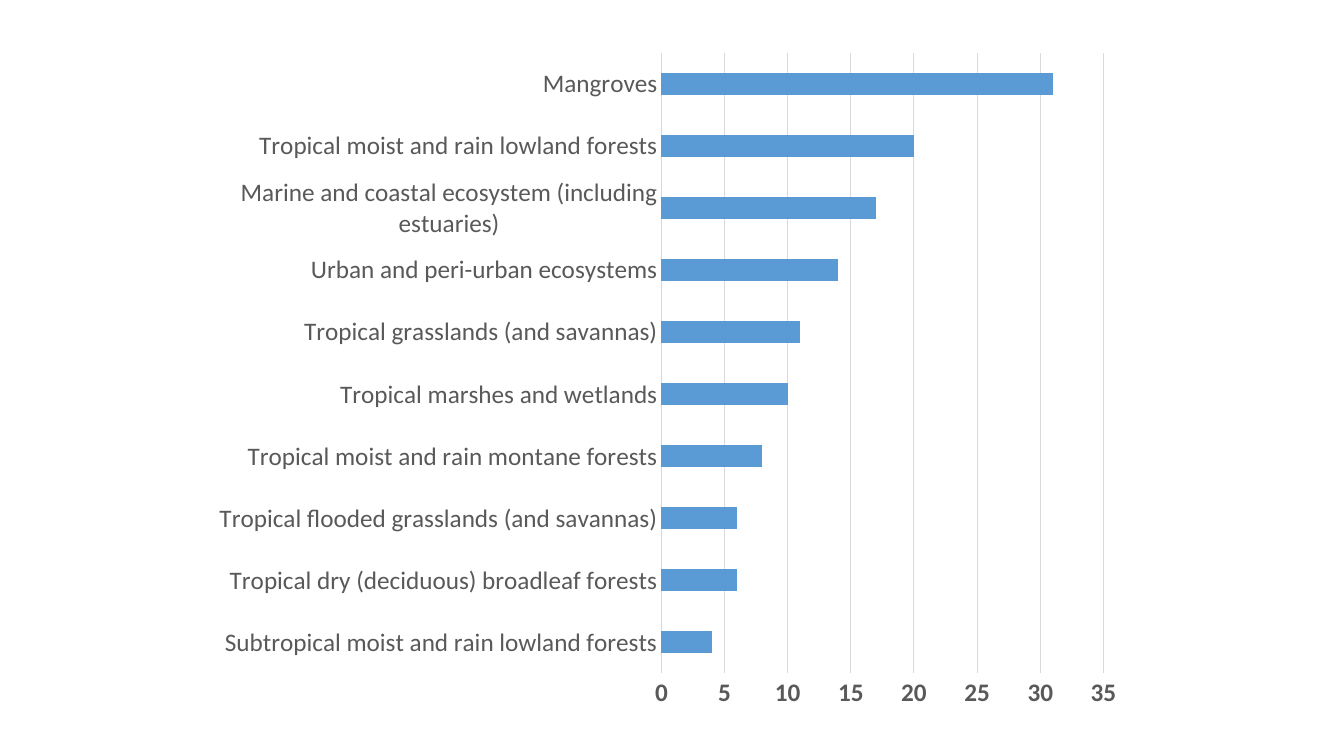
"""Build a slide with a bar chart of ecosystems."""
from dataclasses import dataclass

from pptx import Presentation
from pptx.chart.axis import _BaseAxis
from pptx.chart.chart import Chart
from pptx.chart.data import CategoryChartData
from pptx.dml.color import RGBColor
from pptx.dml.line import LineFormat
from pptx.enum.chart import XL_CHART_TYPE, XL_TICK_MARK
from pptx.oxml import parse_xml
from pptx.oxml.ns import nsdecls
from pptx.util import Inches, Pt

BAR = XL_CHART_TYPE.BAR_CLUSTERED
NO_TICK = XL_TICK_MARK.NONE
WIDTH, HEIGHT = Inches(13.33), Inches(7.5)
FONT, TEXT, RULE, BLUE = "Calibri", "595959", "D9D9D9", "5B9BD5"
CHART_BOX = (0.1493, 0.052, 0.6954, 0.9027)
PLOT_BOX = {"x": 0.493, "y": 0.02, "w": 0.473, "h": 0.909}


@dataclass(frozen=True)
class Ecosystem:
    name: str
    count: int


ECOSYSTEMS = [
    Ecosystem("Subtropical moist and rain lowland forests", 4),
    Ecosystem("Tropical dry (deciduous) broadleaf forests", 6),
    Ecosystem("Tropical flooded grasslands (and savannas)", 6),
    Ecosystem("Tropical moist and rain montane forests", 8),
    Ecosystem("Tropical marshes and wetlands", 10),
    Ecosystem("Tropical grasslands (and savannas)", 11),
    Ecosystem("Urban and peri-urban ecosystems", 14),
    Ecosystem("Marine and coastal ecosystem (including estuaries)", 17),
    Ecosystem("Tropical moist and rain lowland forests", 20),
    Ecosystem("Mangroves", 31),
]


def color(value: str) -> RGBColor:
    return RGBColor.from_string(value)


def style_line(line: LineFormat) -> None:
    line.color.rgb = color(RULE)
    line.width = Pt(0.75)


def style_axis(axis: _BaseAxis, bold: bool) -> None:
    formats = {"major_tick_mark": NO_TICK, "minor_tick_mark": NO_TICK}
    for key, value in formats.items():
        setattr(axis, key, value)
    font = axis.tick_labels.font
    for key, value in {"name": FONT, "size": Pt(18), "bold": bold}.items():
        setattr(font, key, value)
    font.color.rgb = color(TEXT)


def place_plot(chart: Chart) -> None:
    plot_area = chart.element.xpath(".//c:plotArea")[0]
    for old in plot_area.xpath("./c:layout"):
        plot_area.remove(old)
    modes = "".join(f'<c:{k}Mode val="edge"/>' for k in "xy")
    sizes = "".join(f'<c:{k} val="{v}"/>' for k, v in PLOT_BOX.items())
    plot_area.insert(0, parse_xml(
        f'<c:layout {nsdecls("c")}><c:manualLayout><c:layoutTarget val="inner"/>'
        f"{modes}{sizes}</c:manualLayout></c:layout>"))


def main() -> None:
    prs = Presentation()
    prs.slide_width, prs.slide_height = WIDTH, HEIGHT
    s = prs.slides.add_slide(prs.slide_layouts[6])

    data = CategoryChartData()
    data.categories = [e.name for e in ECOSYSTEMS]
    data.add_series("Series 1", [e.count for e in ECOSYSTEMS])
    box = [round(share * full) for share, full in zip(CHART_BOX, (WIDTH, HEIGHT) * 2)]
    chart = s.shapes.add_chart(BAR, *box, data).chart
    chart.has_legend = chart.has_title = False
    chart.font.name, chart.font.size = FONT, Pt(10)
    chart.font.color.rgb = color("000000")

    plot = chart.plots[0]
    plot.gap_width, plot.vary_by_categories = 182, False
    fill = plot.series[0].format.fill
    fill.solid()
    fill.fore_color.rgb = color(BLUE)

    style_axis(chart.category_axis, False)
    style_line(chart.category_axis.format.line)
    values = chart.value_axis
    style_axis(values, True)
    scale = {"minimum_scale": 0, "maximum_scale": 35, "major_unit": 5}
    for key, value in scale.items():
        setattr(values, key, value)
    values.format.line.fill.background()
    style_line(values.major_gridlines.format.line)
    place_plot(chart)
    prs.save("out.pptx")


if __name__ == "__main__":
    main()
